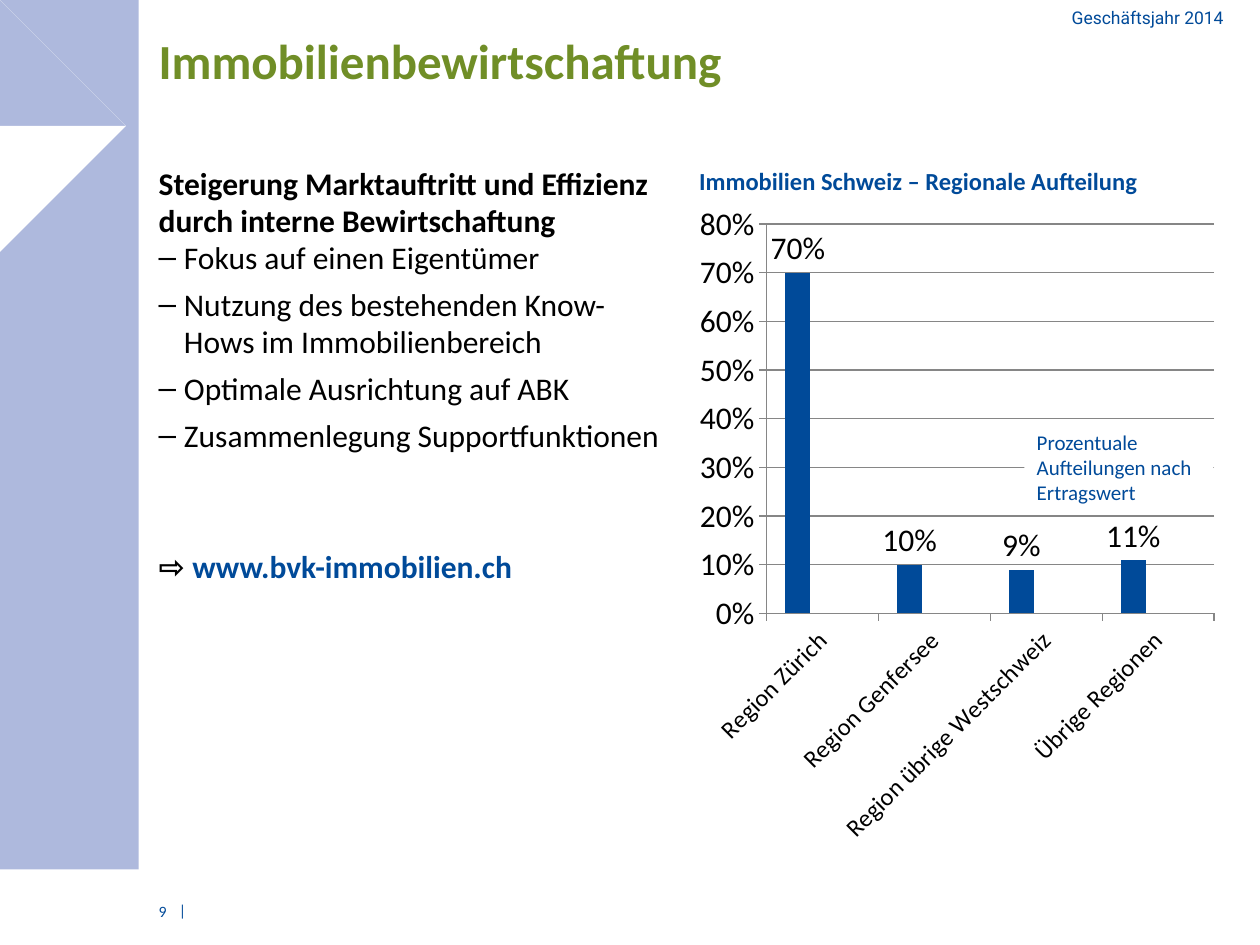
from lxml import etree
from pptx import Presentation
from pptx.chart.data import CategoryChartData
from pptx.dml.color import RGBColor
from pptx.enum import chart as ch, shapes, text
from pptx.oxml.ns import qn
from pptx.util import Inches, Pt

BLUE = RGBColor(0x00, 0x4A, 0x99)
GREEN = RGBColor(0x70, 0x8E, 0x27)
LILAC = RGBColor(0xAE, 0xB9, 0xDD)
GREY = RGBColor(0x86, 0x86, 0x86)
BLACK = RGBColor(0, 0, 0)
WHITE = RGBColor(0xFF, 0xFF, 0xFF)


def add_run(paragraph, words, size, color, bold=False, font="Calibri"):
    run = paragraph.add_run()
    run.text = words
    run.font.name = font
    run.font.size = Pt(size)
    run.font.bold = bold
    run.font.color.rgb = color


def set_frame(shape, box=None, inset=0, anchor=text.MSO_ANCHOR.TOP):
    if box:
        shape.left, shape.top, shape.width, shape.height = map(Inches, box)
    frame = shape.text_frame
    frame.word_wrap = True
    frame.auto_size = text.MSO_AUTO_SIZE.NONE
    frame.vertical_anchor = anchor
    frame.margin_left = frame.margin_right = Inches(inset)
    frame.margin_top = frame.margin_bottom = Inches(inset / 2)
    return frame.paragraphs[0]


prs = Presentation()
prs.slide_width, prs.slide_height = Inches(10), Inches(7.5)
slide = prs.slides.add_slide(prs.slide_layouts[1])

# Side band with chevron
band = slide.shapes.add_shape(shapes.MSO_SHAPE.RECTANGLE, 0, 0, Inches(1.1), Inches(6.9))
outline = slide.shapes.build_freeform(0.43, 0.4, scale=Inches(1))
outline.add_line_segments([(0.35, 0.48), (0.83, 0.97), (0.35, 1.46), (0.43, 1.53), (0.98, 0.97)])
chevron = outline.convert_to_shape()
for part, color in ((band, LILAC), (chevron, WHITE)):
    part.shadow.inherit = False
    part.fill.solid()
    part.fill.fore_color.rgb = color
    part.line.fill.background()

# Title
heading = set_frame(slide.shapes.title, (1.26, 0.24, 8.47, 0.76))
heading.alignment = text.PP_ALIGN.LEFT
add_run(heading, "Immobilienbewirtschaftung", 28, GREEN, True)

# Body: lead sentence, dashed list, web address
body = slide.placeholders[1]
lead = set_frame(body, (1.26, 1.31, 4.06, 5.28))
add_run(lead, "Steigerung Marktauftritt und Effizienz durch interne Bewirtschaftung", 18, BLACK, True)
for point in (
    "Fokus auf einen Eigentümer",
    "Nutzung des bestehenden Know-Hows im Immobilienbereich",
    "Optimale Ausrichtung auf ABK",
    "Zusammenlegung Supportfunktionen",
):
    item = body.text_frame.add_paragraph()
    item.level = 1
    item.space_after = Pt(6)
    add_run(item, point, 18, BLACK)
website = body.text_frame.add_paragraph()
add_run(website, "⇨ ", 18, BLACK, True)
add_run(website, "www.bvk-immobilien.ch", 18, BLUE, True)

for paragraph in body.text_frame.paragraphs:
    paragraph.line_spacing = Pt(21)
    paragraph.space_before = Pt(0)
    props = paragraph._p.get_or_add_pPr()
    indent = 0 if paragraph is lead or paragraph._p is lead._p else Inches(0.2)
    props.set("marL", str(indent))
    props.set("indent", str(-indent))
    if paragraph.level:
        etree.SubElement(props, qn("a:buChar")).set("char", "‒")
    else:
        etree.SubElement(props, qn("a:buNone"))
website.space_before = Pt(48)

# Regional split chart
data = CategoryChartData(number_format="0%")
data.categories = ["Region Zürich", "Region Genfersee", "Region übrige Westschweiz", "Übrige Regionen"]
data.add_series("Series 1", (0.7, 0.1, 0.09, 0.11))
data.add_series("Series 2", (None,) * 4)
data.add_series("Series 3", (None,) * 4)
chart = slide.shapes.add_chart(
    ch.XL_CHART_TYPE.COLUMN_CLUSTERED,
    Inches(5.47), Inches(1.52), Inches(4.25), Inches(5.28), data).chart
chart.has_title = False
chart.has_legend = False
chart.font.name = "Calibri"
chart.font.size = Pt(18)
chart.font.color.rgb = BLACK

plot = chart.plots[0]
plot.gap_width = 150
plot.overlap = 0
plot.vary_by_categories = False
for series, color in zip(plot.series, (BLUE, GREEN, BLACK)):
    series.format.fill.solid()
    series.format.fill.fore_color.rgb = color
labels = plot.series[0].data_labels
labels.show_value = True
labels.number_format = "0%"
labels.number_format_is_linked = False
labels.position = ch.XL_LABEL_POSITION.OUTSIDE_END

regions, shares = chart.category_axis, chart.value_axis
shares.minimum_scale, shares.maximum_scale, shares.major_unit = 0, 0.8, 0.1
shares.tick_labels.number_format = "0%"
shares.tick_labels.number_format_is_linked = False
shares.has_major_gridlines = True
shares.major_gridlines.format.line.color.rgb = GREY
for axis in (regions, shares):
    axis.major_tick_mark = ch.XL_TICK_MARK.OUTSIDE
    axis.format.line.color.rgb = GREY
regions.tick_labels.font.size = Pt(14)
regions._element.find(qn("c:txPr")).find(qn("a:bodyPr")).set("rot", "-2700000")

# Note on the chart
note = slide.shapes.add_shape(
    shapes.MSO_SHAPE.RECTANGLE, Inches(8.13), Inches(3.36), Inches(1.5), Inches(0.71))
note.shadow.inherit = False
note.fill.solid()
note.fill.fore_color.rgb = WHITE
note.line.fill.background()
remark = set_frame(note, inset=0.1)
remark.alignment = text.PP_ALIGN.LEFT
add_run(remark, "Prozentuale Aufteilungen nach Ertragswert", 12, BLUE)

# Chart heading, header and page number
TOP, BOTTOM = text.MSO_ANCHOR.TOP, text.MSO_ANCHOR.BOTTOM
LEFT, RIGHT = text.PP_ALIGN.LEFT, text.PP_ALIGN.RIGHT
for words, box, inset, anchor, align, size, bold, font in (
    ("Immobilien Schweiz – Regionale Aufteilung", (5.45, 1.27, 3.78, 0.34), 0.1, TOP, LEFT, 14, True, "Calibri"),
    ("Geschäftsjahr 2014", (7.44, 0.08, 2.27, 0.14), 0, BOTTOM, RIGHT, 10, False, "Roboto"),
    ("9", (1.26, 7.16, 0.16, 0.19), 0, TOP, LEFT, 9, False, "Calibri"),
    ("|", (1.42, 7.15, 0.11, 0.21), 0, TOP, LEFT, 9, False, "Calibri"),
):
    label = slide.shapes.add_textbox(*map(Inches, box))
    line = set_frame(label, inset=inset, anchor=anchor)
    line.alignment = align
    add_run(line, words, size, BLUE, bold, font)

prs.save("out.pptx")
